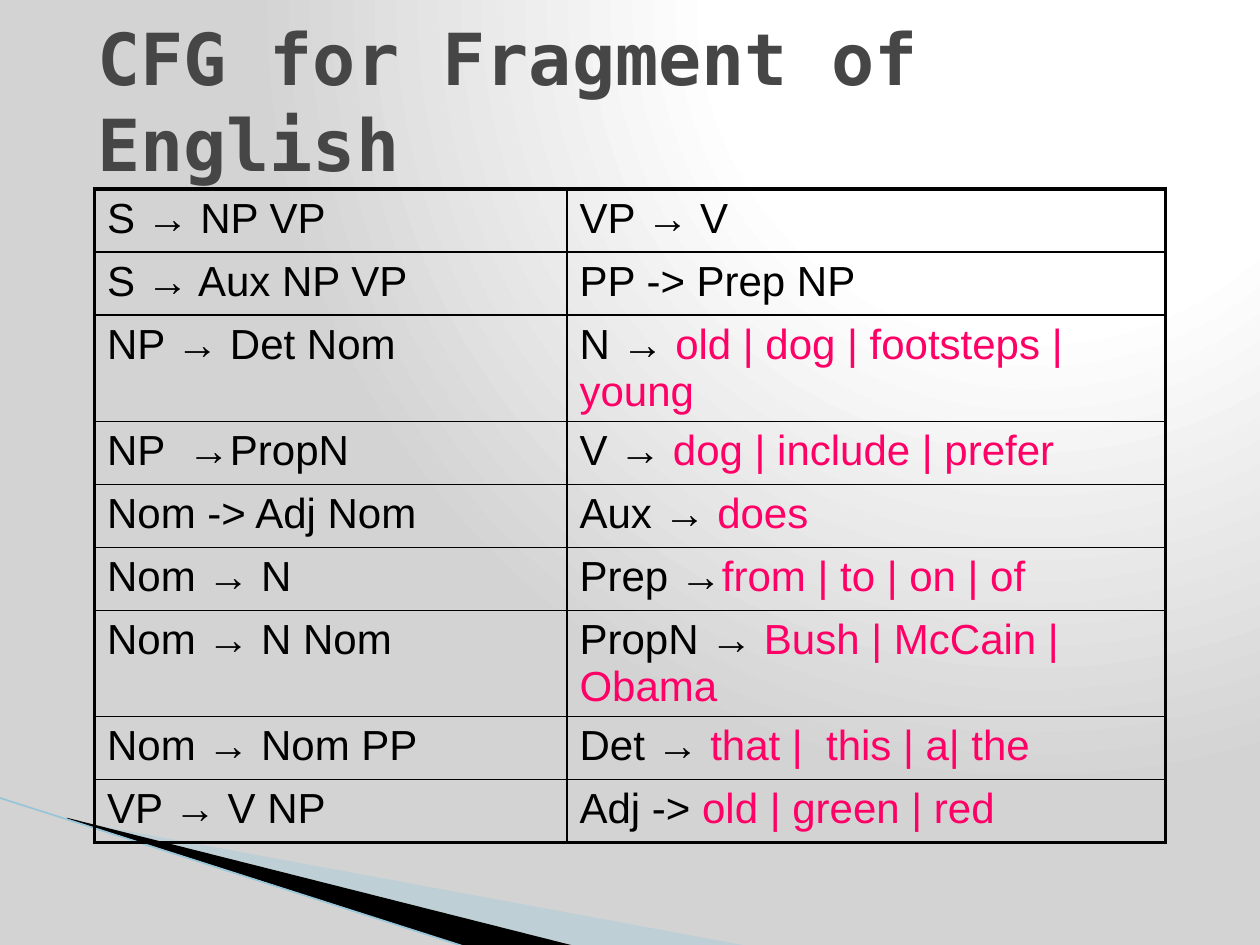
from dataclasses import dataclass
from typing import Any, NamedTuple

from lxml import etree
from pptx import Presentation
from pptx.dml.color import RGBColor
from pptx.enum.text import MSO_ANCHOR, MSO_AUTO_SIZE, PP_ALIGN
from pptx.enum.shapes import MSO_CONNECTOR
from pptx.oxml import parse_xml
from pptx.oxml.ns import nsdecls, qn
from pptx.util import Inches, Pt

LEFT = PP_ALIGN.LEFT
MIDDLE = MSO_ANCHOR.MIDDLE
NO_FIT = MSO_AUTO_SIZE.NONE
STRAIGHT = MSO_CONNECTOR.STRAIGHT
WIDE, HIGH = Inches(10), Inches(7.5)


@dataclass(frozen=True)
class Theme:
    ink: str = "000000"
    head: str = "464646"
    word: str = "FF0066"
    pale: str = "A0CBDC"
    edge: str = "97C5D8"
    light: str = "FFFFFF"
    dark: str = "D3D3D3"
    mono: str = "DejaVu Sans Mono"
    sans: str = "Arial"
    title: float = 41
    body: float = 24
    thick: float = 2.25
    thin: float = 1


class Rule(NamedTuple):
    left: str
    words: str = ""


class Wedge(NamedTuple):
    points: tuple
    color: str
    alpha: int


THEME = Theme()
COLS = (3.75, 4.75)
ROW = 0.5
RULES = (
    (Rule("S → NP VP"), Rule("VP → V")),
    (Rule("S → Aux NP VP"), Rule("PP -> Prep NP")),
    (Rule("NP → Det Nom"), Rule("N → ", "old | dog | footsteps | young")),
    (Rule("NP  →PropN"), Rule("V → ", "dog | include | prefer")),
    (Rule("Nom -> Adj Nom"), Rule("Aux → ", "does")),
    (Rule("Nom → N"), Rule("Prep →", "from | to | on | of")),
    (Rule("Nom → N Nom"), Rule("PropN → ", "Bush | McCain | Obama")),
    (Rule("Nom → Nom PP"), Rule("Det → ", "that |  this | a| the")),
    (Rule("VP → V NP"), Rule("Adj -> ", "old | green | red")),
)
WEDGES = (
    Wedge(((0.55, 6.51), (5.95, 7.51), (4.56, 7.51), (0.55, 6.5)), THEME.pale, 40),
    Wedge(((0.53, 6.49), (4.57, 7.51), (3.72, 7.52), (0.54, 6.5)), THEME.ink, 100),
)


def apply(item: Any, values: dict) -> None:
    for name, value in values.items():
        setattr(item, name, value)


def style(font: Any, name: str, size: float, color: str, bold: bool = False) -> None:
    apply(font, {"name": name, "size": Pt(size), "bold": bold})
    font.color.rgb = RGBColor.from_string(color)


def paint(slide: Any) -> None:
    stops = ((0, THEME.light), (40, THEME.light), (100, THEME.dark))
    marks = "".join(
        f'<a:gs pos="{at * 1000}"><a:srgbClr val="{color}"/></a:gs>' for at, color in stops
    )
    back = parse_xml(
        f'<p:bg {nsdecls("p", "a")}><p:bgPr><a:gradFill rotWithShape="1">'
        f'<a:gsLst>{marks}</a:gsLst><a:path path="circle">'
        '<a:fillToRect l="65000" b="98000"/></a:path></a:gradFill>'
        "<a:effectLst/></p:bgPr></p:bg>"
    )
    slide.element.cSld.insert(0, back)


def draw_wedge(slide: Any, wedge: Wedge) -> None:
    points = [(Inches(x), Inches(y)) for x, y in wedge.points]
    pen = slide.shapes.build_freeform(*points[0])
    pen.add_line_segments(points[1:], close=True)
    shape = pen.convert_to_shape()
    shape.shadow.inherit = False
    shape.fill.solid()
    shape.fill.fore_color.rgb = RGBColor.from_string(wedge.color)
    shape.line.fill.background()
    if wedge.alpha < 100:
        tone = shape.element.spPr.find(".//" + qn("a:srgbClr"))
        etree.SubElement(tone, qn("a:alpha")).set("val", str(wedge.alpha * 1000))


def draw_edge(slide: Any) -> None:
    ends = (Inches(v) for v in (-0.01, 6.33, 3.71, 7.52))
    line = slide.shapes.add_connector(STRAIGHT, *ends)
    line.line.color.rgb = RGBColor.from_string(THEME.edge)
    line.line.width = Pt(0.95)
    etree.SubElement(line.element.spPr, qn("a:effectLst"))


def draw_title(slide: Any, text: str) -> None:
    title = slide.shapes.title
    spot = {"left": 0.67, "top": 0.25, "width": 8.67, "height": 1.08}
    apply(title, {name: Inches(value) for name, value in spot.items()})
    frame = title.text_frame
    frame.text = text
    apply(frame, {"word_wrap": True, "auto_size": NO_FIT, "vertical_anchor": MIDDLE})
    para = frame.paragraphs[0]
    para.alignment = LEFT
    style(para.runs[0].font, THEME.mono, THEME.title, THEME.head, True)


def frame_cell(cell: Any, outer: dict) -> None:
    props = cell._tc.get_or_add_tcPr()
    for side, edge in outer.items():
        width = Pt(THEME.thick if edge else THEME.thin)
        props.append(parse_xml(
            f'<a:{side} {nsdecls("a")} w="{width}"><a:solidFill>'
            f'<a:srgbClr val="{THEME.ink}"/></a:solidFill></a:{side}>'
        ))
    cell.fill.background()


def fill_cell(cell: Any, rule: Rule) -> None:
    para = cell.text_frame.paragraphs[0]
    for text, color in ((rule.left, THEME.ink), (rule.words, THEME.word)):
        if text:
            run = para.add_run()
            run.text = text
            style(run.font, THEME.sans, THEME.body, color)


def draw_rules(slide: Any) -> None:
    rows, cols = len(RULES), len(COLS)
    spot = (Inches(v) for v in (0.75, 1.5, sum(COLS), ROW * rows))
    table = slide.shapes.add_table(rows, cols, *spot).table
    apply(table, {"first_row": False, "horz_banding": False})
    for col, width in zip(table.columns, COLS):
        col.width = Inches(width)
    for r, pair in enumerate(RULES):
        for c, rule in enumerate(pair):
            cell = table.cell(r, c)
            frame_cell(cell, {
                "lnL": c == 0, "lnR": c == cols - 1,
                "lnT": r == 0, "lnB": r == rows - 1,
            })
            fill_cell(cell, rule)


def main() -> None:
    deck = Presentation()
    apply(deck, {"slide_width": WIDE, "slide_height": HIGH})
    slide = deck.slides.add_slide(deck.slide_layouts[5])
    paint(slide)
    for wedge in WEDGES:
        draw_wedge(slide, wedge)
    draw_edge(slide)
    draw_title(slide, "CFG for Fragment of English")
    draw_rules(slide)
    deck.save("out.pptx")


if __name__ == "__main__":
    main()
